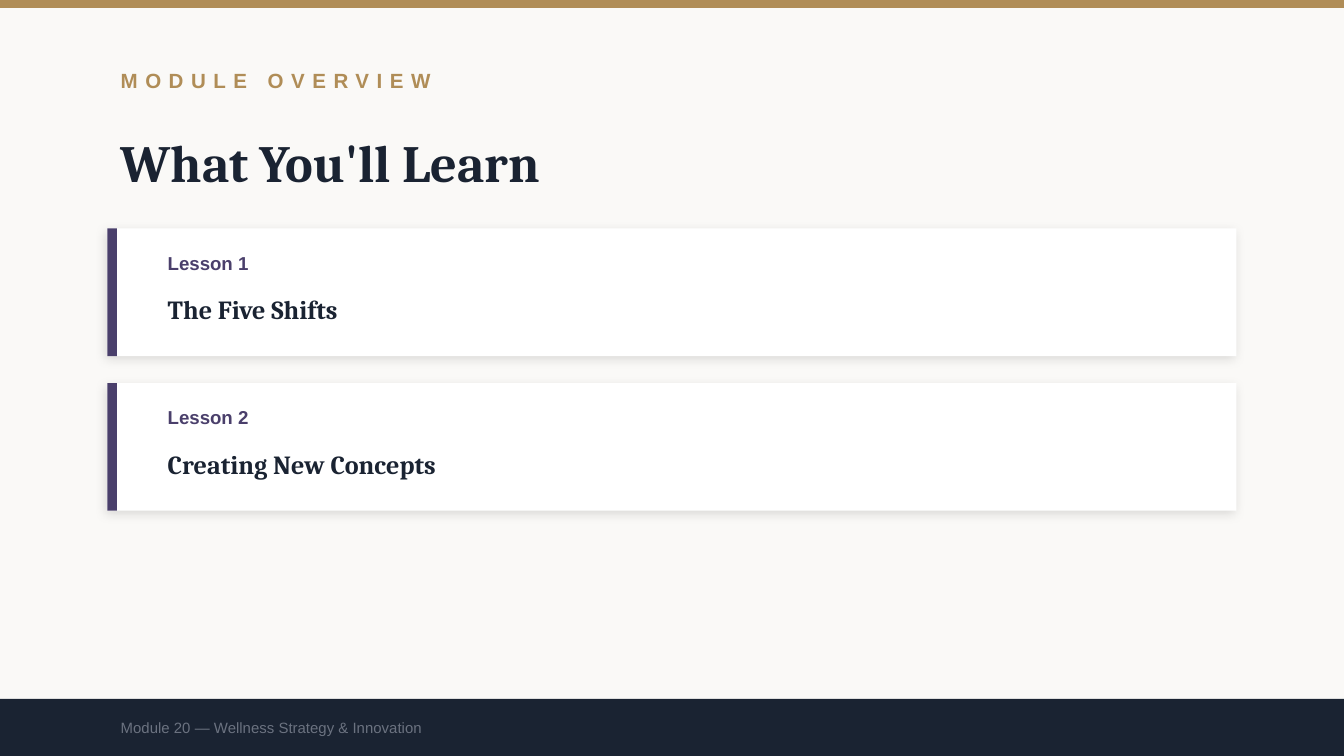
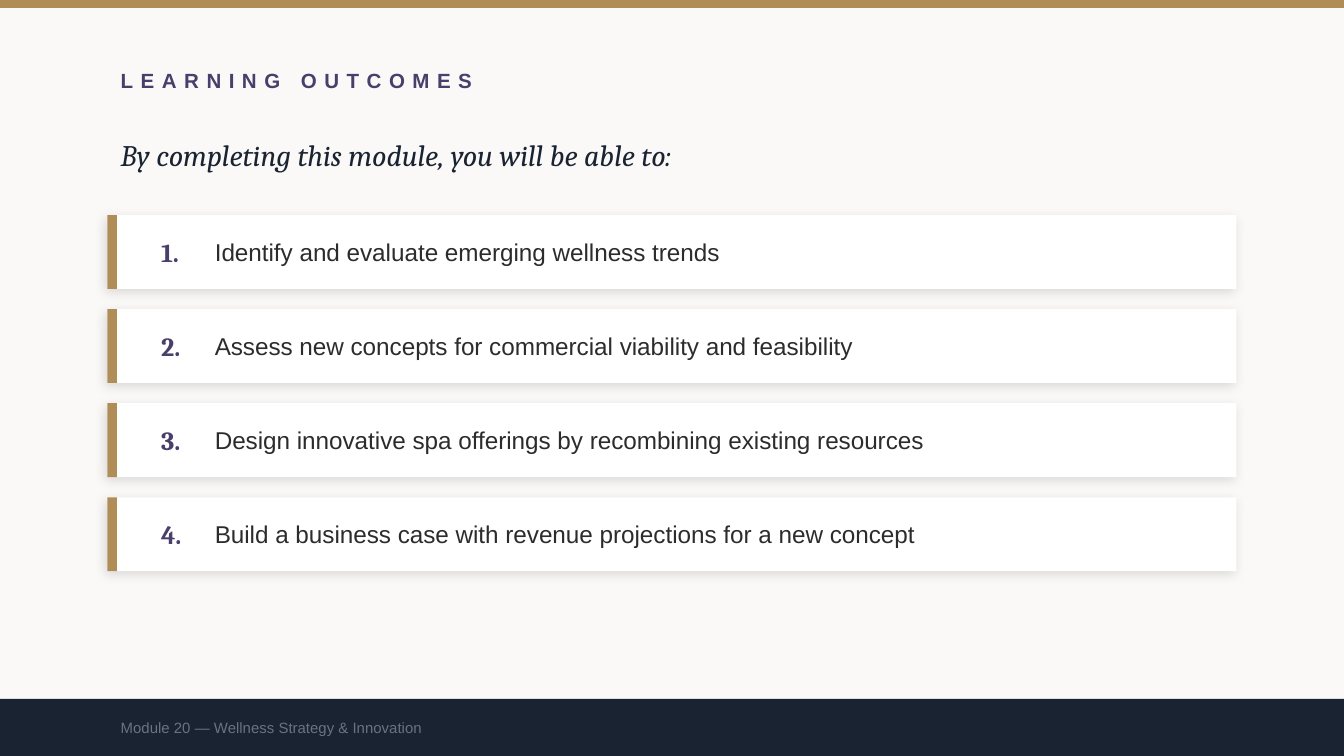
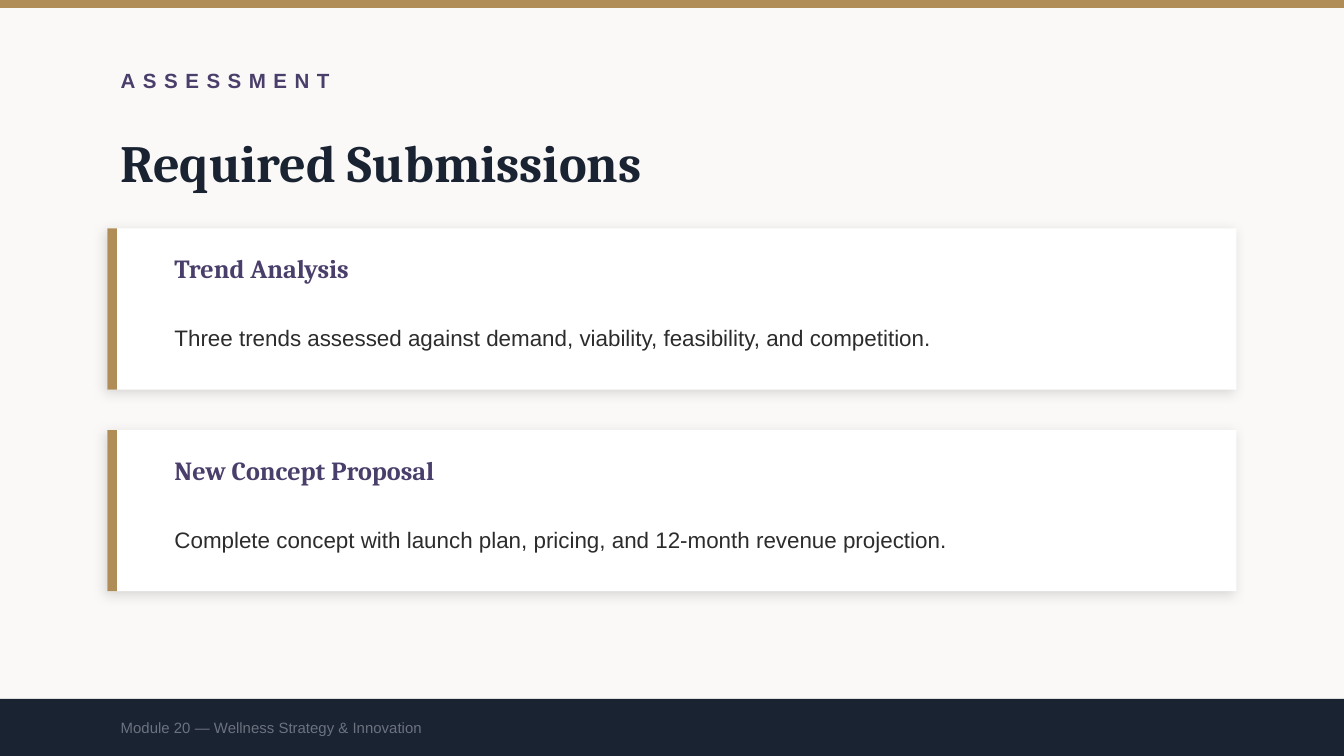
from dataclasses import dataclass

from lxml.etree import SubElement
from pptx import Presentation
from pptx.dml.color import RGBColor
from pptx.enum.shapes import MSO_SHAPE
from pptx.enum.text import MSO_ANCHOR
from pptx.oxml.ns import qn
from pptx.util import Inches, Pt


@dataclass(frozen=True)
class Theme:
    paper: str = "FAF9F7"
    white: str = "FFFFFF"
    gold: str = "B08D57"
    navy: str = "1A2332"
    purple: str = "4A3F6B"
    ink: str = "2C2C2C"
    grey: str = "6B7280"
    shadow: str = "000000"
    serif: str = "Cambria"
    sans: str = "Arial"
    title_size: int = 28
    intro_size: int = 16
    heading_size: int = 14
    item_size: int = 13
    body_size: int = 12
    kicker_size: int = 11
    label_size: int = 10
    footer_size: int = 8


T = Theme()
WIDTH = 10
HEIGHT = WIDTH * 9 / 16
LEFT, CARD_W, ACCENT_W = 0.8, 8.4, 0.07
FOOTER_TOP = 5.2
FOOTER = "Module 20 — Wellness Strategy & Innovation"


def style(name, size, color, **extra):
    return {"color": color, "name": name, "size": Pt(size), **extra}


TITLE = style(T.serif, T.title_size, T.navy, bold=True)
INTRO = style(T.serif, T.intro_size, T.navy, italic=True)
HEADING = style(T.serif, T.heading_size, T.navy, bold=True)
ACCENT_HEADING = HEADING | {"color": T.purple}
ITEM = style(T.sans, T.item_size, T.ink)
BODY = style(T.sans, T.body_size, T.ink)
KICKER = style(T.sans, T.kicker_size, T.purple, bold=True)
LABEL = style(T.sans, T.label_size, T.purple, bold=True)
FOOTNOTE = style(T.sans, T.footer_size, T.grey)


def to_emu(*lengths):
    """Convert inches, rounding away floating-point residue first."""
    return [Inches(round(length, 4)) for length in lengths]


def add_rect(s, x, y, w, h, color):
    sp = s.shapes.add_shape(MSO_SHAPE.RECTANGLE, *to_emu(x, y, w, h))
    sp.fill.solid()
    sp.fill.fore_color.rgb = RGBColor.from_string(color)
    sp.line.fill.background()
    sp.shadow.inherit = False
    return sp


def add_text(s, x, y, w, h, text, fmt, tracking=0, line_spacing=None):
    """Place one vertically centred line; tracking is in points."""
    tf = s.shapes.add_textbox(*to_emu(x, y, w, h)).text_frame
    tf.word_wrap = True
    tf.vertical_anchor = MSO_ANCHOR.MIDDLE
    p = tf.paragraphs[0]
    if line_spacing:
        p.line_spacing = line_spacing
    r = p.add_run()
    r.text = text
    for key, value in fmt.items():
        if key == "color":
            r.font.color.rgb = RGBColor.from_string(value)
        else:
            setattr(r.font, key, value)
    if tracking:
        r.font._element.set("spc", str(tracking * 100))


def add_soft_shadow(sp):
    effects = sp._element.spPr.find(qn("a:effectLst"))
    shadow = SubElement(effects, qn("a:outerShdw"), blurRad=str(Pt(6)), dist=str(Pt(2)),
                        dir=str(135 * 60000), algn="bl", rotWithShape="0")
    color = SubElement(shadow, qn("a:srgbClr"), val=T.shadow)
    SubElement(color, qn("a:alpha"), val="12000")


def add_card(s, y, h, accent):
    add_soft_shadow(add_rect(s, LEFT, y, CARD_W, h, T.white))
    add_rect(s, LEFT, y, ACCENT_W, h, accent)


def lesson_card(s, y, h, label, heading):
    add_card(s, y, h, T.purple)
    add_text(s, LEFT + 0.35, y + 0.08, 7, 0.35, label, LABEL)
    add_text(s, LEFT + 0.35, y + 0.4, 7.8, 0.4, heading, HEADING)


def outcome_card(s, y, h, number, outcome):
    add_card(s, y, h, T.gold)
    add_text(s, LEFT + 0.3, y, 0.4, h, number, ACCENT_HEADING)
    add_text(s, LEFT + 0.7, y, 7.4, h, outcome, ITEM)


def submission_card(s, y, h, heading, detail):
    add_card(s, y, h, T.gold)
    add_text(s, LEFT + 0.4, y + 0.12, 7.7, 0.35, heading, ACCENT_HEADING)
    add_text(s, LEFT + 0.4, y + 0.5, 7.7, 0.55, detail, BODY, line_spacing=1.4)


def stack_cards(s, draw_card, top, h, gap, rows):
    for i, row in enumerate(rows):
        draw_card(s, top + i * (h + gap), h, *row)


def add_footer(s):
    h = HEIGHT - FOOTER_TOP
    add_rect(s, 0, FOOTER_TOP, WIDTH, h, T.navy)
    add_text(s, LEFT, FOOTER_TOP, 8, h, FOOTER, FOOTNOTE)


def add_slide(prs, kicker, title, kicker_color=T.purple, title_fmt=TITLE, title_h=0.6):
    """Add a slide with its background, top band and headings."""
    s = prs.slides.add_slide(prs.slide_layouts[6])
    s.background.fill.solid()
    s.background.fill.fore_color.rgb = RGBColor.from_string(T.paper)
    add_rect(s, 0, 0, WIDTH, 0.06, T.gold)
    add_text(s, LEFT, 0.4, 8, 0.4, kicker, KICKER | {"color": kicker_color}, tracking=4)
    add_text(s, LEFT, 0.9, 8, title_h, title, title_fmt)
    return s


def overview_slide(prs):
    s = add_slide(prs, "MODULE OVERVIEW", "What You'll Learn", kicker_color=T.gold)
    lessons = ["The Five Shifts", "Creating New Concepts"]
    rows = [(f"Lesson {n}", lesson) for n, lesson in enumerate(lessons, 1)]
    stack_cards(s, lesson_card, 1.7, 0.95, 0.2, rows)


def outcomes_slide(prs):
    s = add_slide(prs, "LEARNING OUTCOMES", "By completing this module, you will be able to:",
                  title_fmt=INTRO, title_h=0.5)
    outcomes = [
        "Identify and evaluate emerging wellness trends",
        "Assess new concepts for commercial viability and feasibility",
        "Design innovative spa offerings by recombining existing resources",
        "Build a business case with revenue projections for a new concept",
    ]
    rows = [(f"{n}.", outcome) for n, outcome in enumerate(outcomes, 1)]
    stack_cards(s, outcome_card, 1.6, 0.55, 0.15, rows)


def assessment_slide(prs):
    s = add_slide(prs, "ASSESSMENT", "Required Submissions")
    stack_cards(s, submission_card, 1.7, 1.2, 0.3, [
        ("Trend Analysis",
         "Three trends assessed against demand, viability, feasibility, and competition."),
        ("New Concept Proposal",
         "Complete concept with launch plan, pricing, and 12-month revenue projection."),
    ])


def main():
    prs = Presentation()
    prs.slide_width, prs.slide_height = to_emu(WIDTH, HEIGHT)
    for build_slide in (overview_slide, outcomes_slide, assessment_slide):
        build_slide(prs)
    for s in prs.slides:
        add_footer(s)
    prs.save("out.pptx")


if __name__ == "__main__":
    main()
